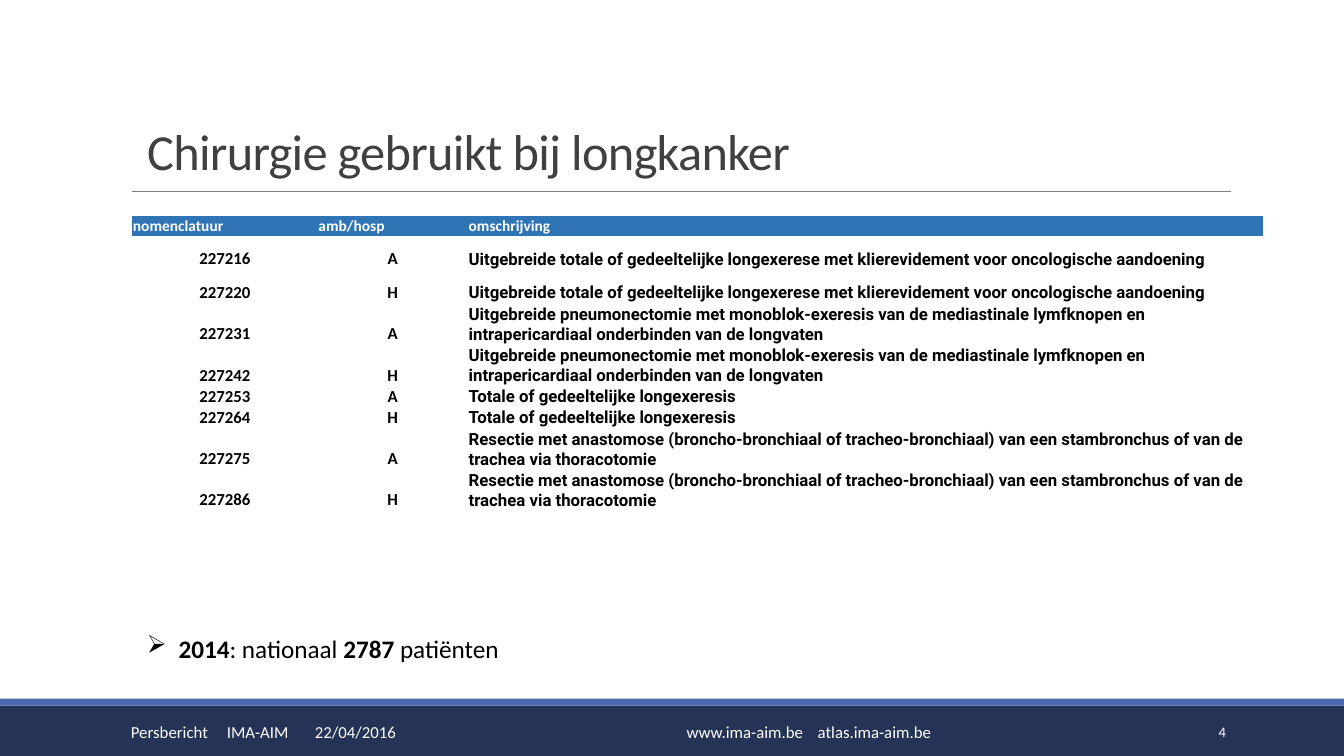
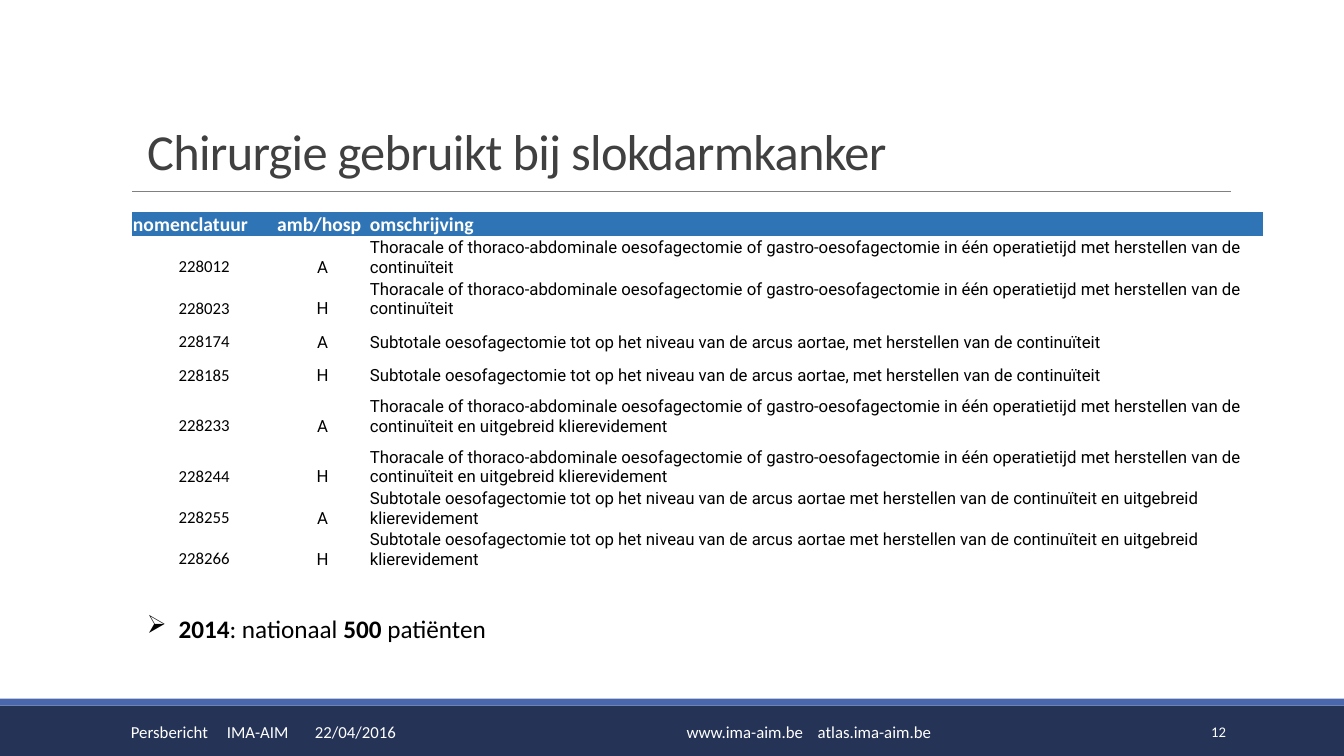
"""Build two slides on the surgery codes used for lung and gullet cancer."""
from dataclasses import dataclass

from lxml import etree
from pptx import Presentation
from pptx.dml.color import RGBColor
from pptx.enum.shapes import MSO_CONNECTOR, MSO_SHAPE
from pptx.enum.text import MSO_ANCHOR, MSO_AUTO_SIZE, PP_ALIGN
from pptx.oxml.ns import qn
from pptx.util import Pt

LEFT, MID, RIGHT = PP_ALIGN.LEFT, PP_ALIGN.CENTER, PP_ALIGN.RIGHT
LOW, HALF = MSO_ANCHOR.BOTTOM, MSO_ANCHOR.MIDDLE
FIT, FIXED = MSO_AUTO_SIZE.SHAPE_TO_FIT_TEXT, MSO_AUTO_SIZE.NONE
RECT, STRAIGHT = MSO_SHAPE.RECTANGLE, MSO_CONNECTOR.STRAIGHT
PLAIN = "{2D5ABB26-0587-4C30-8999-92F81FD0307C}"
WIDE, HIGH = 960, 540
EDGE = 94.32
HEADS = ("nomenclatuur", "amb/hosp", "omschrijving")


@dataclass(frozen=True)
class Theme:
    """Colours, fonts and type sizes."""
    navy: str = "253356"
    blue: str = "4A66AC"
    head: str = "2F75B5"
    rule: str = "808080"
    grey: str = "404040"
    black: str = "000000"
    white: str = "FFFFFF"
    sans: str = "Calibri"
    body: str = "Roboto"
    title: float = 36
    note: float = 18
    cell: float = 12
    foot: float = 12
    page: float = 10.5


class Deck:
    """Holds the style and the current slide."""

    def __init__(self, theme):
        """Start an empty wide deck."""
        self.theme = theme
        self.show = Presentation()
        self.show.slide_width, self.show.slide_height = Pt(WIDE), Pt(HIGH)
        self.slide = None

    def font(self, para, size, hue, face=None, bold=False):
        """Set the font of a paragraph."""
        font = para.font
        font.name, font.size, font.bold = face or self.theme.sans, Pt(size), bold
        font.color.rgb = RGBColor.from_string(hue)

    def page(self, title, num):
        """Add a slide with its title, rule, bands and footer."""
        theme = self.theme
        self.slide = self.show.slides.add_slide(self.show.slide_layouts[5])
        self.band(504, 36, theme.navy)
        self.band(499, 5, theme.blue)
        self.line(EDGE, 136.8, 879.12)
        self.title(title)
        self.foot(86.4, 290, "Persbericht\tIMA-AIM\t22/04/2016", theme.foot, tabs=(68.6, 131.4))
        self.foot(388, 379.4, "\twww.ima-aim.be\tatlas.ima-aim.be", theme.foot, tabs=(95.4, 189))
        self.foot(779.76, 103, num, theme.page, RIGHT)

    def band(self, top, high, hue):
        """Draw a band across the slide."""
        band = self.slide.shapes.add_shape(RECT, 0, Pt(top), Pt(WIDE), Pt(high))
        band.shadow.inherit = False
        band.fill.solid()
        band.fill.fore_color.rgb = RGBColor.from_string(hue)
        band.line.fill.background()

    def line(self, left, top, right):
        """Draw a thin level rule."""
        line = self.slide.shapes.add_connector(STRAIGHT, Pt(left), Pt(top), Pt(right), Pt(top))
        line.line.width = Pt(0.5)
        line.line.color.rgb = RGBColor.from_string(self.theme.rule)
        etree.SubElement(line._element.spPr, qn("a:effectLst"))

    def title(self, text):
        """Place and style the title."""
        shape = self.slide.shapes.title
        shape.left, shape.top, shape.width, shape.height = Pt(97.92), Pt(18), Pt(792), Pt(114.5)
        frame = shape.text_frame
        frame.text = text
        frame.auto_size, frame.vertical_anchor = FIXED, LOW
        para = frame.paragraphs[0]
        para.alignment, para.line_spacing = LEFT, 0.85
        self.font(para, self.theme.title, self.theme.grey)
        para.runs[0]._r.get_or_add_rPr().set("spc", "-50")

    def box(self, left, top, wide):
        """Add a wrapping text box and return its frame."""
        frame = self.slide.shapes.add_textbox(Pt(left), Pt(top), Pt(wide), Pt(28.8)).text_frame
        frame.word_wrap = True
        return frame

    def foot(self, left, wide, text, size, align=LEFT, tabs=()):
        """Write one part of the footer."""
        frame = self.box(left, 508.3, wide)
        frame.vertical_anchor = HALF
        para = frame.paragraphs[0]
        para.add_run().text = text
        para.alignment = align
        if tabs:
            stops = etree.SubElement(para._p.get_or_add_pPr(), qn("a:tabLst"))
            for stop in tabs:
                etree.SubElement(stops, qn("a:tab"), pos=str(Pt(stop)), algn="l")
        self.font(para, size, self.theme.white)

    def note(self, top, count):
        """Write the arrow point with the patient count."""
        frame = self.box(97.92, top, 536.4)
        frame.auto_size = FIT
        para = frame.paragraphs[0]
        props = para._p.get_or_add_pPr()
        props.set("marL", str(Pt(22.5)))
        props.set("indent", str(Pt(-22.5)))
        etree.SubElement(props, qn("a:buChar"), char="➢")
        self.font(para, self.theme.note, self.theme.black)
        for spot, text in enumerate(("2014", ": nationaal ", count, " patiënten")):
            run = para.add_run()
            run.text = text
            run.font.bold = spot % 2 == 0

    def cell(self, cell, text, size, hue, face, bold, align, fill=None):
        """Fill and style one table cell."""
        cell.margin_left = cell.margin_right = cell.margin_top = Pt(0.7)
        cell.margin_bottom = 0
        cell.vertical_anchor = LOW
        if fill:
            cell.fill.solid()
            cell.fill.fore_color.rgb = RGBColor.from_string(fill)
        else:
            cell.fill.background()
        cell.text = text
        para = cell.text_frame.paragraphs[0]
        para.alignment = align
        self.font(para, size, hue, face, bold)

    def table(self, top, cols, size, faces, bold, pairs):
        """Add a table with an A and an H row for each treatment."""
        theme = self.theme
        rows = [(code, kind, text, high) for *codes, high, text in pairs
                for code, kind in zip(codes, "AH")]
        highs = [14.4] + [row[-1] for row in rows]
        shape = self.slide.shapes.add_table(len(highs), len(cols), Pt(EDGE), Pt(top),
                                            Pt(sum(cols)), Pt(sum(highs)))
        table = shape.table
        table.horz_banding = False
        table._tbl.tblPr.find(qn("a:tableStyleId")).text = PLAIN
        for col, wide in zip(table.columns, cols):
            col.width = Pt(wide)
        for row, high in zip(table.rows, highs):
            row.height = Pt(high)
        for x, head in enumerate(HEADS):
            self.cell(table.cell(0, x), head, size, theme.white, theme.sans, True, LEFT, theme.head)
            for y, row in enumerate(rows, 1):
                self.cell(table.cell(y, x), row[x], theme.cell, theme.black, faces[x], bold,
                          LEFT if x == 2 else MID)


LUNG = (
    ("227216", "227220", 24, "Uitgebreide totale of gedeeltelijke longexerese met "
     "klierevidement voor oncologische aandoening"),
    ("227231", "227242", 24, "Uitgebreide pneumonectomie met monoblok-exeresis van de "
     "mediastinale lymfknopen en intrapericardiaal onderbinden van de longvaten"),
    ("227253", "227264", 14.4, "Totale of gedeeltelijke longexeresis"),
    ("227275", "227286", 24, "Resectie met anastomose (broncho-bronchiaal of "
     "tracheo-bronchiaal) van een stambronchus of van de trachea via thoracotomie"),
)
CHEST = ("Thoracale of thoraco-abdominale oesofagectomie of gastro-oesofagectomie "
         "in één operatietijd met herstellen van de continuïteit")
PART = "Subtotale oesofagectomie tot op het niveau van de arcus aortae"
GLAND = " en uitgebreid klierevidement"
THROAT = (
    ("228012", "228023", 24, CHEST),
    ("228174", "228185", 24, PART + ", met herstellen van de continuïteit"),
    ("228233", "228244", 36, CHEST + GLAND),
    ("228255", "228266", 24, PART + " met herstellen van de continuïteit" + GLAND),
)


def main():
    """Build and save the deck."""
    theme = Theme()
    deck = Deck(theme)
    deck.page("Chirurgie gebruikt bij longkanker", "4")
    deck.table(154, (132.5, 107.3, 568), 11, (theme.sans, theme.sans, theme.body), True, LUNG)
    deck.note(448.5, "2787")
    deck.page("Chirurgie gebruikt bij slokdarmkanker", "12")
    deck.table(151.2, (103, 66.2, 638.6), 14, (theme.sans, theme.body, theme.body), False, THROAT)
    deck.note(434.2, "500")
    deck.show.save("out.pptx")


if __name__ == "__main__":
    main()
